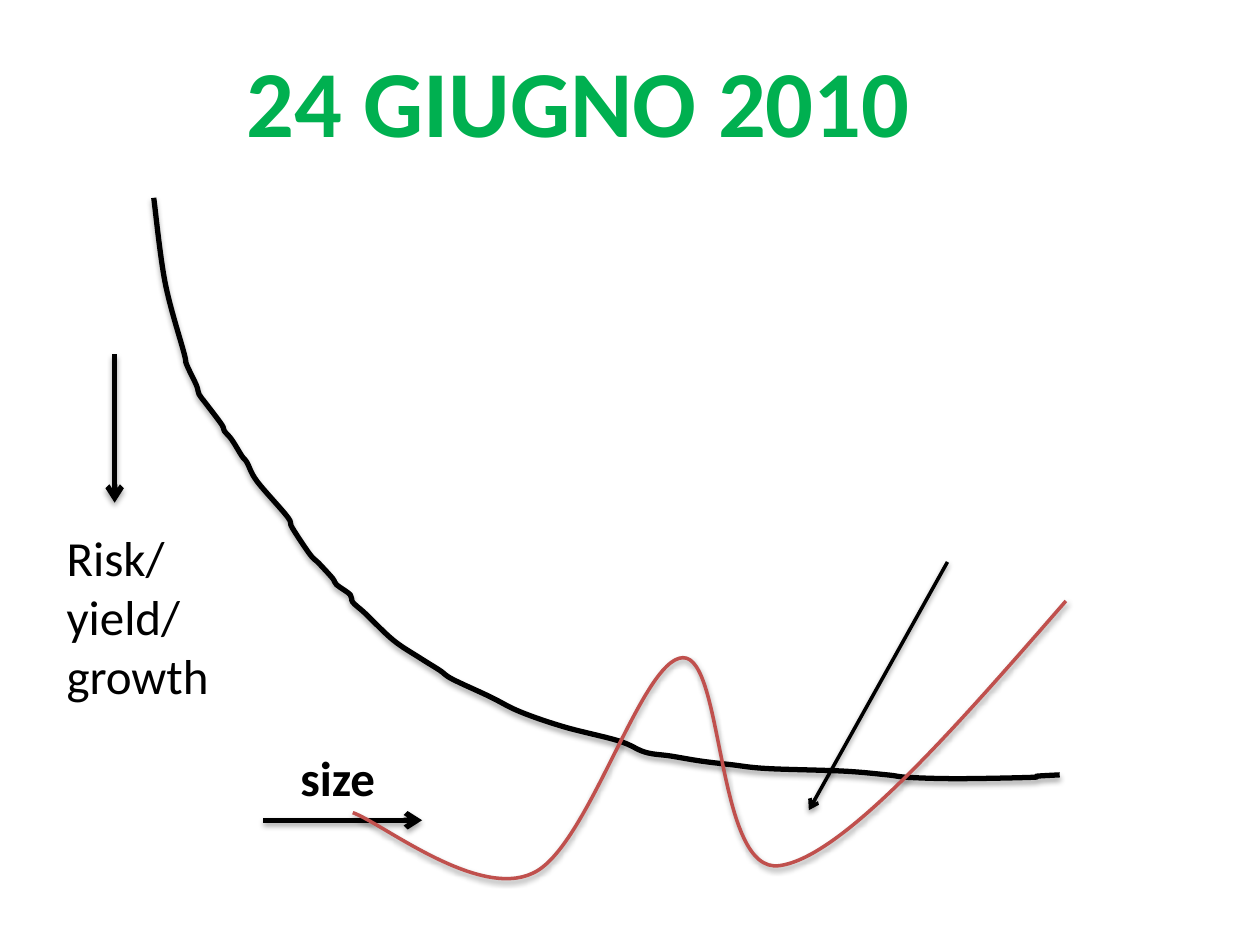
import pptx
import pptx.util
import pptx.dml.color
import pptx.enum.shapes
import pptx.enum.text
import pptx.oxml
import pptx.oxml.ns

COLORS = {"title": "00B050", "ink": "000000", "wave": "C0504D"}
FONT = "Calibri"
COLUMNS, ROWS = 100, 75  # square cells, a tenth of an inch each
CELL = pptx.util.Inches(10) // COLUMNS

# Points that the size / risk curve passes through, as (column, row)
RISK_KNOTS = [
    (12.2, 15.7), (13.1, 22.4), (14.6, 28), (14.8, 28.9), (15.6, 30.6),
    (15.8, 31.3), (16.4, 32.1), (17.6, 33.7), (17.8, 34.2), (18.4, 34.9),
    (19.2, 36.2), (19.6, 36.7), (20.4, 38.2), (22.8, 41), (23.2, 41.9),
    (24.6, 44), (25.3, 44.7), (26.4, 45.9), (26.7, 46.4), (27.8, 47.2),
    (28, 47.8), (29, 48.7), (31.2, 50.8), (33.3, 52.2), (34.9, 53.2),
    (35.9, 53.9), (38.9, 55.3), (41.3, 56.5), (44.8, 57.7), (49.1, 58.8),
    (51.2, 59.7), (53.2, 60), (55.6, 60.4), (58.1, 60.7), (60.9, 61),
    (66.9, 61.2), (70.4, 61.5), (72.1, 61.7), (76, 61.8), (81.8, 61.7),
    (82.3, 61.6), (84.1, 61.5),
]
# Start, then two handles and an end for each piece of the wave
WAVE = [
    (84.6, 47.7), (75.8, 57.8), (66.9, 68), (61.9, 68.7),
    (56.8, 69.5), (57.5, 52.1), (54.2, 52.2),
    (50.9, 52.3), (46.7, 67.3), (42.3, 69.3),
    (37.9, 71.4), (30.3, 65.3), (28, 64.5),
]


def grid(n):
    return round(n * CELL)


def rgb(name):
    return pptx.dml.color.RGBColor.from_string(COLORS[name])


def add_text(s, box, lines, size, color="ink", bold=False, centered=False, wrap=True):
    tf = s.shapes.add_textbox(*map(grid, box)).text_frame
    tf.word_wrap = wrap
    for i, line in enumerate(lines):
        p = tf.paragraphs[0] if i == 0 else tf.add_paragraph()
        if centered:
            p.alignment = pptx.enum.text.PP_ALIGN.CENTER
        r = p.add_run()
        r.text = line
        r.font.name, r.font.size, r.font.bold = FONT, pptx.util.Pt(size), bold
        r.font.color.rgb = rgb(color)


def style_line(sp, color, width):
    """Set colour and width, with a soft shadow falling straight down."""
    sp.line.color.rgb = rgb(color)
    sp.line.width = pptx.util.Pt(width)
    dist, alpha = (23000, 35000) if width > 2 else (20000, 38000)
    sp._element.spPr.append(pptx.oxml.parse_xml(
        f'<a:effectLst {pptx.oxml.ns.nsdecls("a")}>'
        f'<a:outerShdw blurRad="40000" dist="{dist}" dir="5400000" rotWithShape="0">'
        f'<a:srgbClr val="{COLORS["ink"]}"><a:alpha val="{alpha}"/></a:srgbClr>'
        '</a:outerShdw></a:effectLst>'))


def add_arrow(s, start, end, width):
    sp = s.shapes.add_connector(
        pptx.enum.shapes.MSO_CONNECTOR.STRAIGHT, *map(grid, start + end))
    style_line(sp, "ink", width)
    sp.line._get_or_add_ln().append(pptx.oxml.parse_xml(
        f'<a:tailEnd {pptx.oxml.ns.nsdecls("a")} type="arrow"/>'))


def smooth(knots):
    """Return Bezier points for a smooth curve through the knots."""
    padded = [knots[0]] + knots + [knots[-1]]
    points = [knots[0]]
    for before, a, b, after in zip(padded, padded[1:], padded[2:], padded[3:]):
        points.append(tuple(a[i] + (b[i] - before[i]) / 6 for i in (0, 1)))
        points.append(tuple(b[i] - (after[i] - a[i]) / 6 for i in (0, 1)))
        points.append(b)
    return points


def add_curve(s, points, color, width):
    start, *rest = [(grid(x), grid(y)) for x, y in points]
    builder = s.shapes.build_freeform(*start)
    builder.add_line_segments(rest, close=False)
    sp = builder.convert_to_shape()
    # Turn every three straight steps into one cubic Bezier piece
    qn = pptx.oxml.ns.qn
    steps = list(sp._element.spPr.iter(qn("a:lnTo")))
    for i in range(0, len(steps), 3):
        bezier = steps[i]
        bezier.tag = qn("a:cubicBezTo")
        for step in steps[i + 1:i + 3]:
            bezier.append(step[0])
            step.getparent().remove(step)
    sp.fill.background()
    style_line(sp, color, width)


def main():
    prs = pptx.Presentation()
    prs.slide_width, prs.slide_height = grid(COLUMNS), grid(ROWS)
    s = prs.slides.add_slide(prs.slide_layouts[6])

    # Title
    add_text(s, (18.3, 2.9, 55.2, 10.1), ["24 GIUGNO 2010"], 54, "title",
             bold=True, centered=True, wrap=False)

    # Risk curve and axis labels
    add_curve(s, smooth(RISK_KNOTS), "ink", 3)
    add_text(s, (15.4, 58.8, 22.8, 5.7), ["size"], 28, bold=True, centered=True)
    add_text(s, (4.3, 41.4, 15.7, 15.1), ["Risk/", "yield/", "growth"], 28)

    # Arrows: pointer, size axis, risk axis
    add_arrow(s, (75.2, 44.6), (64.2, 64.3), 2)
    add_arrow(s, (20.9, 65.1), (33.5, 65.1), 3)
    add_arrow(s, (9.1, 28.1), (9.1, 39.9), 3)

    # Wave
    add_curve(s, WAVE, "wave", 2)

    prs.save("out.pptx")


if __name__ == "__main__":
    main()
